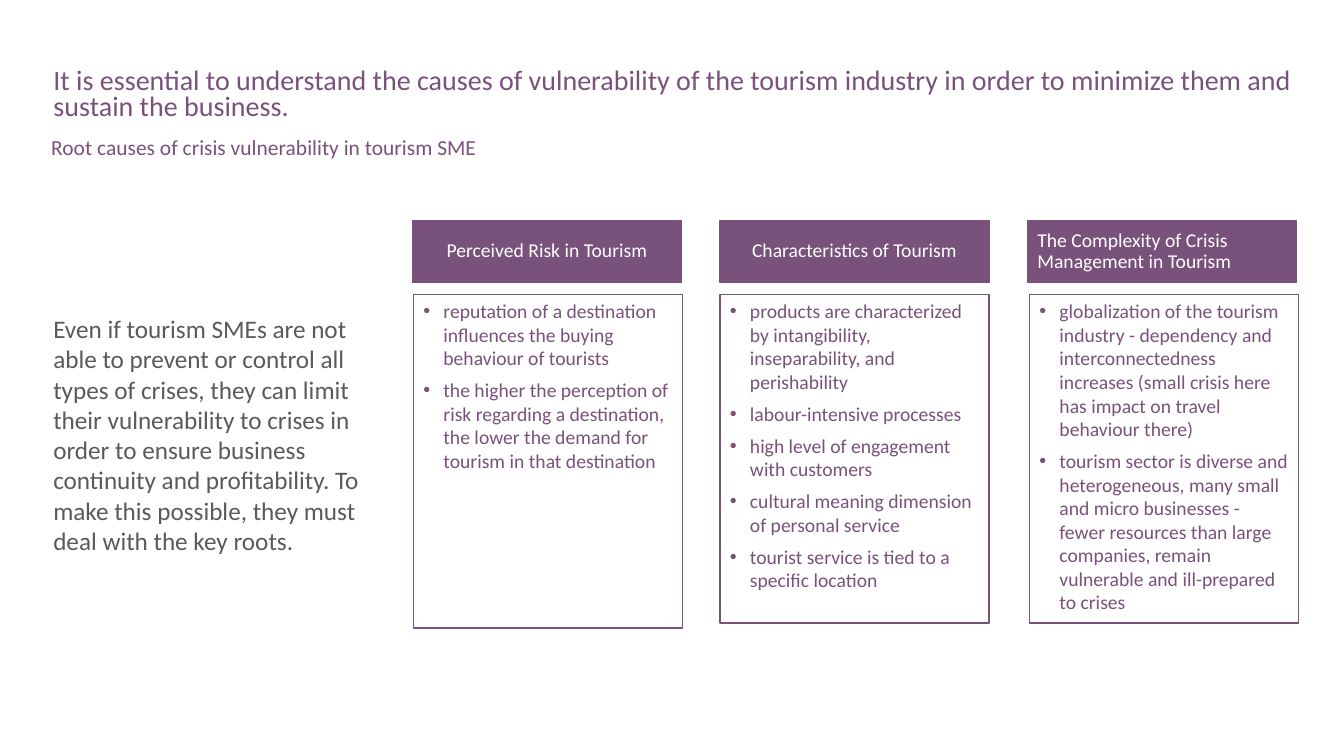
from dataclasses import dataclass

from lxml.etree import SubElement
from pptx import Presentation
from pptx.dml.color import RGBColor
from pptx.enum.shapes import MSO_SHAPE
from pptx.enum.text import MSO_ANCHOR, MSO_AUTO_SIZE, PP_ALIGN
from pptx.oxml.ns import qn
from pptx.util import Inches, Pt


@dataclass(frozen=True)
class Theme:
    font: str = "Calibri"
    plum: RGBColor = RGBColor(0x79, 0x52, 0x7B)
    grey: RGBColor = RGBColor(0x59, 0x5A, 0x59)
    white: RGBColor = RGBColor(0xFF, 0xFF, 0xFF)
    headline: float = 20
    message: float = 18
    subtitle: float = 15.3
    column: float = 14


THEME = Theme()

HEADLINE = (
    "It is essential to understand the causes of vulnerability of the tourism industry "
    "in order to minimize them and sustain the business."
)
SUBTITLE = "Root causes of crisis vulnerability in tourism SME"
MESSAGE = (
    "Even if tourism SMEs are not able to prevent or control all types of crises, "
    "they can limit their vulnerability to crises in order to ensure business continuity "
    "and profitability. To make this possible, they must deal with the key roots."
)


@dataclass(frozen=True)
class Cause:
    heading: tuple
    points: tuple
    align: PP_ALIGN = PP_ALIGN.CENTER
    shift: float = 0
    body_height: float = 3.26


CAUSES = (
    Cause(
        ("Perceived Risk in Tourism",),
        (
            "reputation of a destination influences the buying behaviour of tourists",
            "the higher the perception of risk regarding a destination, "
            "the lower the demand for tourism in that destination",
        ),
        shift=0.01,
        body_height=3.31,
    ),
    Cause(
        ("Characteristics of Tourism",),
        (
            "products are characterized by intangibility, inseparability, and perishability",
            "labour-intensive processes",
            "high level of engagement with customers",
            "cultural meaning dimension of personal service",
            "tourist service is tied to a specific location",
        ),
    ),
    Cause(
        ("The Complexity of Crisis", "Management in Tourism"),
        (
            "globalization of the tourism industry - dependency and interconnectedness "
            "increases (small crisis here has impact on travel behaviour there)",
            "tourism sector is diverse and heterogeneous, many small and micro businesses - "
            "fewer resources than large companies, remain vulnerable and ill-prepared to crises",
        ),
        align=PP_ALIGN.LEFT,
        shift=0.02,
    ),
)


def add_bullet(paragraph, color):
    properties = paragraph._p.get_or_add_pPr()
    properties.set("marL", str(Inches(0.2)))
    properties.set("indent", str(Inches(-0.2)))
    bullet_color = SubElement(properties, qn("a:buClr"))
    SubElement(bullet_color, qn("a:srgbClr"), val=str(color))
    SubElement(properties, qn("a:buFont"), typeface="Arial")
    SubElement(properties, qn("a:buChar"), char="•")


def write(frame, *texts, size, color, align=PP_ALIGN.LEFT, anchor=MSO_ANCHOR.TOP,
          line_spacing=1.0, space_before=0, bullets=False):
    frame.word_wrap = True
    frame.auto_size = MSO_AUTO_SIZE.NONE
    frame.vertical_anchor = anchor
    frame.margin_left = frame.margin_right = Inches(0.1)
    frame.margin_top = frame.margin_bottom = Inches(0.05)
    for index, text in enumerate(texts):
        paragraph = frame.add_paragraph() if index else frame.paragraphs[0]
        if bullets:
            add_bullet(paragraph, color)
        paragraph.text = text
        paragraph.alignment = align
        paragraph.line_spacing = line_spacing
        paragraph.space_before = Pt(space_before if index else 0)
        paragraph.font.name = THEME.font
        paragraph.font.size = Pt(size)
        paragraph.font.color.rgb = color


def add_headings(slide, left, top, width):
    headline = slide.shapes.title
    headline.left, headline.top = Inches(left + 0.02), Inches(top)
    headline.width, headline.height = Inches(width - 0.02), Inches(0.64)
    write(headline.text_frame, HEADLINE, size=THEME.headline, color=THEME.plum,
          line_spacing=0.8)
    subtitle = slide.shapes.add_textbox(
        Inches(left), Inches(top + 0.72), Inches(width), Inches(0.28))
    write(subtitle.text_frame, SUBTITLE, size=THEME.subtitle, color=THEME.plum,
          line_spacing=0.7)


def add_message(slide, left, top, width, height):
    message = slide.shapes.add_textbox(
        Inches(left), Inches(top), Inches(width), Inches(height))
    write(message.text_frame, MESSAGE, size=THEME.message, color=THEME.grey,
          anchor=MSO_ANCHOR.MIDDLE)


def add_panel(slide, left, top, width, height, fill):
    panel = slide.shapes.add_shape(
        MSO_SHAPE.RECTANGLE, Inches(left), Inches(top), Inches(width), Inches(height))
    panel.shadow.inherit = False
    panel.fill.solid()
    panel.fill.fore_color.rgb = fill
    panel.line.color.rgb = THEME.plum
    panel.line.width = Pt(1)
    return panel.text_frame


def add_cause(slide, cause, left, top, width):
    heading = add_panel(slide, left, top, width, 0.61, THEME.plum)
    write(heading, *cause.heading, size=THEME.column, color=THEME.white,
          align=cause.align, anchor=MSO_ANCHOR.MIDDLE, line_spacing=0.9)
    points = add_panel(slide, left + cause.shift, top + 0.73, width,
                       cause.body_height, THEME.white)
    write(points, *cause.points, size=THEME.column, color=THEME.plum,
          space_before=6, bullets=True)


def add_causes(slide, left, top, column_width, pitch):
    for column, cause in enumerate(CAUSES):
        add_cause(slide, cause, left + column * pitch, top, column_width)


def main():
    deck = Presentation()
    deck.slide_width, deck.slide_height = Inches(13.33), Inches(7.5)
    slide = deck.slides.add_slide(deck.slide_layouts.get_by_name("Title Only"))
    add_headings(slide, left=0.41, top=0.63, width=12.56)
    add_message(slide, left=0.43, top=1.79, width=3.49, height=5.04)
    add_causes(slide, left=4.09, top=2.19, column_width=2.67, pitch=3.05)
    deck.save("out.pptx")


if __name__ == "__main__":
    main()
